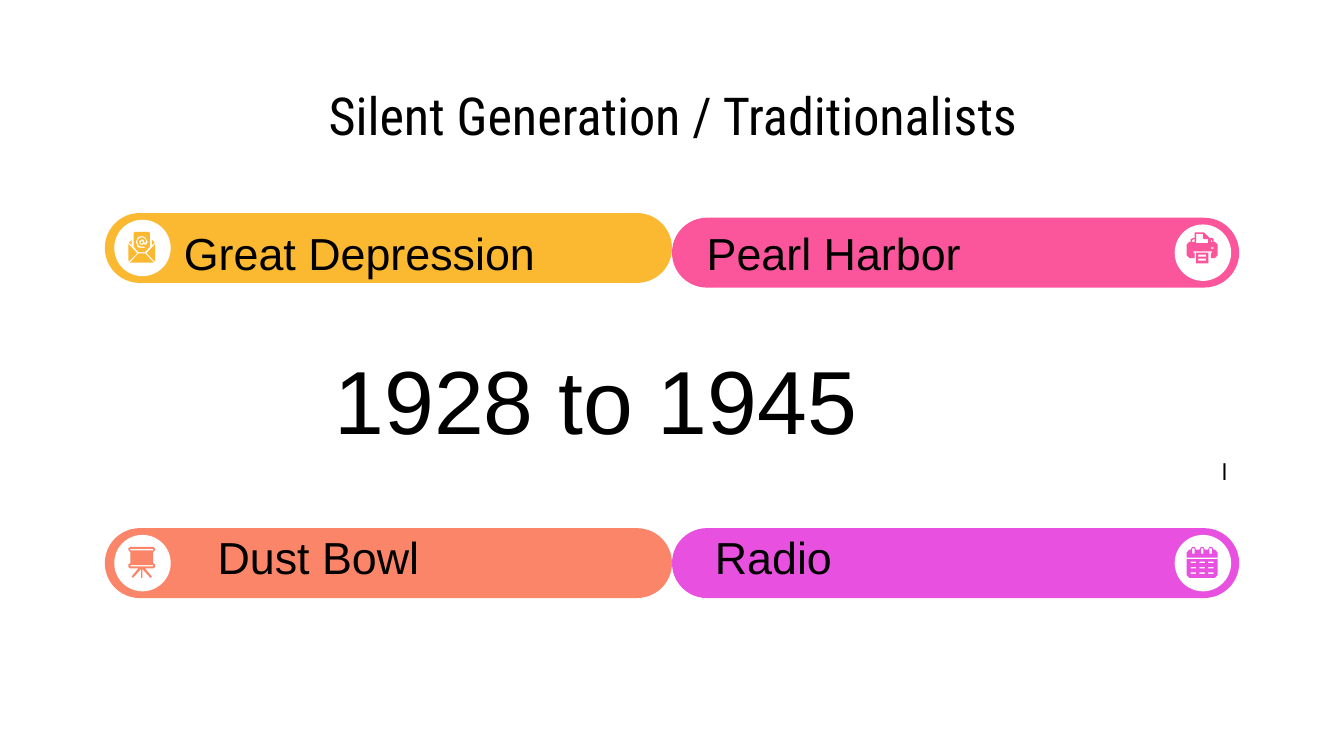
from lxml.etree import SubElement
from pptx import Presentation
from pptx.dml.color import RGBColor
from pptx.enum.shapes import MSO_SHAPE
from pptx.enum.text import MSO_ANCHOR, MSO_AUTO_SIZE, PP_ALIGN
from pptx.oxml.ns import qn
from pptx.util import Inches, Pt

PX = Inches(1) // 200
BLACK = RGBColor(0x00, 0x00, 0x00)
WHITE = RGBColor(0xFF, 0xFF, 0xFF)
YELLOW = RGBColor(0xFB, 0xB8, 0x31)
PINK = RGBColor(0xFB, 0x56, 0x9C)
CORAL = RGBColor(0xFB, 0x85, 0x69)
PURPLE = RGBColor(0xE8, 0x50, 0xE0)

PILL_WIDTH, PILL_HEIGHT = 844, 104
DISC_SIZE, DISC_INSET = 84, 14
LEFT, MIDDLE = 156, 1000


def emu(*lengths):
    return [length * PX for length in lengths]


def rectangle(left, top, width, height):
    right, bottom = left + width, top + height
    return [(left, top), (right, top), (right, bottom), (left, bottom)]


def mirrored(outline):
    return [(82 - x, y) for x, y in outline]


def envelope():
    side = [(21, 36), (21, 60), (22, 62), (34, 50)]
    flap = [(26, 30), (22, 34), (26, 38)]
    bottom = [(36, 50), (23, 64), (59, 64), (46, 50)]
    letter = [(30, 18), (52, 18), (53, 20), (53, 40), (46, 48),
              (36, 48), (29, 40), (29, 20)]
    at_sign = [(41, 24), (46, 26), (50, 33), (47, 38), (44, 36), (41, 38),
               (38, 36), (37, 32), (41, 29), (44, 30), (45, 34), (47, 34),
               (47, 30), (44, 27), (41, 26), (37, 28), (34, 32), (37, 39),
               (41, 40), (45, 40), (46, 42), (41, 42), (35, 41), (32, 33),
               (35, 26)]
    at_center = [(41, 31), (43, 34), (41, 36), (39, 34)]
    return [[side], [mirrored(side)], [flap], [mirrored(flap)], [bottom],
            [letter, at_sign, at_center]]


def printer():
    body = [(30, 12), (44, 12), (52, 20), (56, 20), (58, 22), (58, 26),
            (60, 26), (64, 30), (64, 46), (60, 50), (54, 50), (54, 42),
            (56, 42), (56, 40), (28, 40), (28, 42), (30, 42), (30, 50),
            (22, 50), (18, 46), (18, 30), (22, 26), (24, 26), (24, 22),
            (28, 20), (30, 20)]
    paper = [(32, 14), (42, 14), (42, 20), (44, 22), (50, 22), (50, 28), (32, 28)]
    left_slot = [(30, 22), (28, 22), (26, 24), (26, 26), (30, 26)]
    right_slot = [(54, 22), (56, 24), (56, 26), (54, 26)]
    printout = [rectangle(32, 42, 18, 16)]
    printout += [rectangle(35, top, 12, 3) for top in (45, 51)]
    return [[body, paper, left_slot, right_slot, rectangle(54, 34, 4, 2)], printout]


def board():
    stand = [(24, 18), (58, 18), (61, 20), (61, 22), (58, 26), (58, 42),
             (61, 44), (61, 48), (58, 50), (46, 50), (56, 62), (54, 64),
             (42, 51), (42, 64), (40, 64), (40, 51), (28, 64), (26, 62),
             (36, 50), (24, 50), (21, 48), (21, 44), (24, 42), (24, 26),
             (21, 22), (21, 20)]
    return [[stand] + [rectangle(24, top, 34, 2) for top in (21, 45)]]


def calendar():
    columns = [24 + 13 * index for index in range(3)]
    days = [rectangle(x, y, 8, 2) for y in (40, 48, 56) for x in columns]
    sheet = [(18, 36), (64, 36), (64, 60), (60, 64), (22, 64), (18, 60)]
    header = [(18, 34), (18, 26), (22, 22)]
    for x in columns:
        header += [(x, 22), (x + 2, 18), (x + 6, 18), (x + 8, 22)]
    header += [(60, 22), (64, 26), (64, 34)]
    rings = [rectangle(x + 2, 20, 4, 8) for x in columns]
    return [[sheet] + days, [header] + rings]


def paint(shape, color):
    shape.shadow.inherit = False
    shape.fill.solid()
    shape.fill.fore_color.rgb = color
    shape.line.fill.background()


def add_icon(page, left, top, parts, color):
    for outlines in parts:
        builder = None
        for outline in outlines:
            points = [(left + x, top + y) for x, y in outline]
            if builder is None:
                builder = page.shapes.build_freeform(*points[0], scale=PX)
            else:
                builder.move_to(*points[0])
            builder.add_line_segments(points[1:], close=True)
        paint(builder.convert_to_shape(), color)


def add_pill(page, left, top, color, disc_left, icon):
    pill = page.shapes.add_shape(
        MSO_SHAPE.ROUNDED_RECTANGLE, *emu(left, top, PILL_WIDTH, PILL_HEIGHT))
    pill.adjustments[0] = 0.5
    paint(pill, color)
    disc_top = top + (PILL_HEIGHT - DISC_SIZE) // 2
    disc = page.shapes.add_shape(
        MSO_SHAPE.OVAL, *emu(disc_left, disc_top, DISC_SIZE, DISC_SIZE))
    paint(disc, WHITE)
    add_icon(page, disc_left, disc_top, icon, color)


def add_span(para, text, size, font):
    span = para.add_run()
    span.text = text
    span.font.size = Pt(size)
    span.font.name = font
    span.font.color.rgb = BLACK


def add_text(page, place, spans, font="Arial", tab=None):
    box = page.shapes.add_textbox(*emu(*place))
    frame = box.text_frame
    frame.word_wrap = True
    para = frame.paragraphs[0]
    if tab:
        stops = SubElement(para._p.get_or_add_pPr(), qn("a:tabLst"))
        SubElement(stops, qn("a:tab"), pos=str(tab * PX), algn="l")
    for text, size in spans:
        add_span(para, text, size, font)
    return frame


def center_vertically(frame):
    frame.auto_size = MSO_AUTO_SIZE.NONE
    frame.vertical_anchor = MSO_ANCHOR.MIDDLE
    frame.margin_left = frame.margin_right = 20 * PX
    frame.margin_top = frame.margin_bottom = 20 * PX


def add_title(page, text):
    title = page.shapes.title
    title.left, title.top, title.width, title.height = emu(156, 118, 1690, 106)
    center_vertically(title.text_frame)
    title.text_frame.word_wrap = True
    para = title.text_frame.paragraphs[0]
    para.alignment = PP_ALIGN.CENTER
    add_span(para, text, 28, "Roboto Condensed")


def main():
    deck = Presentation()
    deck.slide_width, deck.slide_height = emu(2000, 1125)
    page = deck.slides.add_slide(deck.slide_layouts[5])
    add_title(page, "Silent Generation / Traditionalists")

    left_disc = LEFT + DISC_INSET
    right_disc = MIDDLE + PILL_WIDTH - DISC_INSET - DISC_SIZE + 2
    add_pill(page, LEFT, 317, YELLOW, left_disc, envelope())
    add_pill(page, LEFT, 786, CORAL, left_disc, board())
    add_pill(page, MIDDLE, 324, PINK, right_disc, printer())
    add_pill(page, MIDDLE, 786, PURPLE, right_disc, calendar())

    mark = add_text(page, (1350, 644, 496, 116), [("l", 12)], "Roboto")
    center_vertically(mark)
    mark.paragraphs[0].alignment = PP_ALIGN.RIGHT

    add_text(page, (478, 504, 1180, 182), [("1928 to 1945", 48)])
    add_text(page, (254, 304, 1512, 128),
             [("Great Depression", 24), ("\t", 32), ("Pearl Harbor", 24)], tab=778)
    add_text(page, (304, 778, 1424, 100), [("Dust Bowl\tRadio", 24)], tab=740)
    deck.save("out.pptx")


if __name__ == "__main__":
    main()
